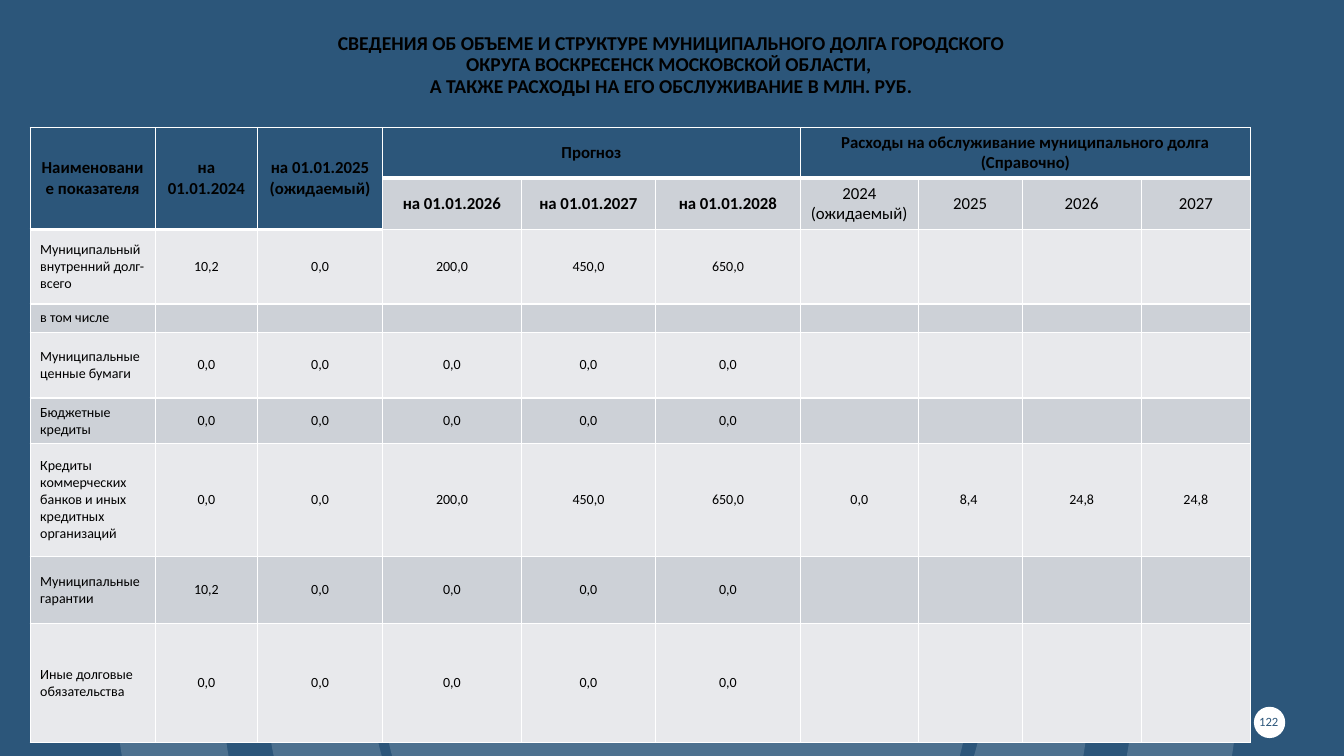
from lxml import etree
from pptx import Presentation
from pptx import util as u
from pptx.dml.color import RGBColor
from pptx.enum import shapes, text
from pptx.oxml.ns import qn

NAVY, WHITE, BLACK = "2C567A", "FFFFFF", "000000"
LIGHT, GREY = "E8E9EC", "CDD1D7"
CENTER, LEFT = text.PP_ALIGN.CENTER, text.PP_ALIGN.LEFT
OVAL, RECTANGLE = shapes.MSO_SHAPE.OVAL, shapes.MSO_SHAPE.RECTANGLE
SLIDE_WIDTH, SLIDE_HEIGHT = 33.87, 19.05

TITLE = ("СВЕДЕНИЯ ОБ ОБЪЕМЕ И СТРУКТУРЕ МУНИЦИПАЛЬНОГО ДОЛГА ГОРОДСКОГО\v"
         "ОКРУГА ВОСКРЕСЕНСК МОСКОВСКОЙ ОБЛАСТИ, \v"
         "А ТАКЖЕ РАСХОДЫ НА ЕГО ОБСЛУЖИВАНИЕ В МЛН. РУБ.")

COLUMN_WIDTHS = [3.15, 2.58, 3.15, 3.5, 3.38, 3.65, 2.97, 2.62, 3.0, 2.75]
ROW_HEIGHTS = [1.28, 1.29, 1.88, 0.71, 1.66, 1.15, 2.85, 1.68, 3.0]
# (row, column, last row, last column, label)
TOP_HEADERS = [
    (0, 0, 1, 0, "Наименование показателя"),
    (0, 1, 1, 1, "на 01.01.2024"),
    (0, 2, 1, 2, "на 01.01.2025\n(ожидаемый)"),
    (0, 3, 0, 5, "Прогноз"),
    (0, 6, 0, 9, "Расходы на обслуживание муниципального долга (Справочно)"),
]
FORECAST_DATES = ["на 01.01.2026", "на 01.01.2027", "на 01.01.2028"]
SERVICE_YEARS = ["2024 (ожидаемый)", "2025", "2026", "2027"]
ZEROS = ["0,0"] * 5
DEBT_ROWS = [
    ["Муниципальный внутренний долг- всего", "10,2", "0,0", "200,0", "450,0", "650,0"],
    ["в том числе"],
    ["Муниципальные ценные бумаги", *ZEROS],
    ["Бюджетные кредиты", *ZEROS],
    ["Кредиты коммерческих банков и иных кредитных организаций",
     "0,0", "0,0", "200,0", "450,0", "650,0", "0,0", "8,4 ", "24,8", "24,8"],
    ["Муниципальные гарантии", "10,2", *ZEROS[1:]],
    ["Иные долговые обязательства", *ZEROS],
]

# Ring outlines in hundredths of an inch: the start, then three points per Bezier curve
OUTER_RING = [
    (640, 1238), (453, 1227), (282, 1131), (180, 930), (78, 725), (97, 524), (220, 334),
    (238, 310), (252, 280), (286, 282), (333, 284), (348, 337), (314, 385),
    (163, 596), (197, 875), (395, 1033), (570, 1172), (821, 1159), (981, 1004),
    (1147, 845), (1173, 592), (1043, 402), (1038, 395), (1034, 387), (1028, 380),
    (1000, 350), (1000, 321), (1034, 293), (1072, 262), (1094, 293), (1111, 319),
    (1221, 467), (1256, 633), (1209, 814), (1145, 1065), (923, 1235), (640, 1238)]
INNER_RING = [
    (674, 1085), (472, 1085), (308, 945), (270, 742), (265, 712), (252, 675), (299, 666),
    (340, 657), (363, 670), (372, 721), (402, 878), (527, 982), (674, 980),
    (821, 980), (945, 873), (975, 714), (983, 668), (1007, 660), (1045, 664),
    (1090, 670), (1081, 705), (1077, 736), (1051, 932), (877, 1085), (674, 1085)]


def color(value):
    return RGBColor.from_string(value)


def paint(shape, fill, opacity=None):
    shape.shadow.inherit = False
    shape.line.fill.background()
    shape.fill.solid()
    shape.fill.fore_color.rgb = color(fill)
    if opacity:
        srgb = shape.fill._xPr.find(".//" + qn("a:srgbClr"))
        etree.SubElement(srgb, qn("a:alpha"), val=str(opacity * 1000))


def write(paragraph, size, ink=BLACK, bold=False, align=CENTER):
    paragraph.alignment = align
    look = {"name": "Calibri", "size": u.Pt(size), "bold": bold}
    for run in paragraph.runs:
        for key, value in look.items():
            setattr(run.font, key, value)
        run.font.color.rgb = color(ink)


def add_plain_shape(slide, kind, left, top, width, height, fill, opacity=None):
    box = [u.Cm(length) for length in (left, top, width, height)]
    paint(slide.shapes.add_shape(kind, *box), fill, opacity)


def add_ring(slide, points):
    builder = slide.shapes.build_freeform(*points[0], scale=u.Cm(2.54) / 100)
    builder.add_line_segments(points[1:], close=True)
    ring = builder.convert_to_shape()
    # Turn each three straight segments into one Bezier curve
    segments = list(ring._element.iter(qn("a:lnTo")))
    for first in range(0, len(segments), 3):
        curve = etree.Element(qn("a:cubicBezTo"))
        segments[first].addprevious(curve)
        for segment in segments[first:first + 3]:
            curve.append(segment[0])
            segment.getparent().remove(segment)
    paint(ring, WHITE, 16)


def add_title(slide):
    title = slide.shapes.title
    place = {"left": 2.31, "top": 0.5, "width": 29.21, "height": 2.08}
    for side, length in place.items():
        setattr(title, side, u.Cm(length))
    frame = title.text_frame
    frame.text = TITLE
    frame.auto_size = text.MSO_AUTO_SIZE.NONE
    frame.vertical_anchor = text.MSO_ANCHOR.BOTTOM
    frame.paragraphs[0].line_spacing = 0.9
    write(frame.paragraphs[0], 14, bold=True)


def add_page_number(slide):
    number = slide.shapes.add_textbox(u.Cm(31.57), u.Cm(17.93), u.Cm(0.81), u.Cm(0.51))
    frame = number.text_frame
    for side in ("left", "top", "right", "bottom"):
        setattr(frame, "margin_" + side, 0)
    frame.word_wrap = True
    frame.vertical_anchor = text.MSO_ANCHOR.MIDDLE
    frame.text = "122"
    write(frame.paragraphs[0], 9, NAVY)


def set_borders(cell, widths):
    for side, width in widths.items():
        line = etree.SubElement(cell._tc.get_or_add_tcPr(), qn("a:ln" + side),
                                w=str(u.Pt(width)))
        fill = etree.SubElement(line, qn("a:solidFill"))
        etree.SubElement(fill, qn("a:srgbClr"), val=WHITE)


def style_cell(cell, fill, borders):
    set_borders(cell, borders)
    cell.fill.solid()
    cell.fill.fore_color.rgb = color(fill)
    cell.vertical_anchor = text.MSO_ANCHOR.MIDDLE


def fill_cell(cell, label, size, bold=False, align=CENTER):
    cell.text = label
    for paragraph in cell.text_frame.paragraphs:
        write(paragraph, size, bold=bold, align=align)
        if not label:
            etree.SubElement(paragraph._p, qn("a:endParaRPr"), sz=str(size * 100))


def add_debt_table(slide):
    table = slide.shapes.add_table(
        len(ROW_HEIGHTS), len(COLUMN_WIDTHS), u.Cm(0.76), u.Cm(3.21),
        u.Cm(sum(COLUMN_WIDTHS)), u.Cm(sum(ROW_HEIGHTS))).table
    table.first_row = table.horz_banding = False
    for column, width in zip(table.columns, COLUMN_WIDTHS):
        column.width = u.Cm(width)
    for row, height in zip(table.rows, ROW_HEIGHTS):
        row.height = u.Cm(height)

    # Fills and borders
    for r in range(len(ROW_HEIGHTS)):
        for c in range(len(COLUMN_WIDTHS)):
            if r == 0 or (r == 1 and c < 3):
                style_cell(table.cell(r, c), NAVY, {"L": 1, "R": 1, "T": 1, "B": 3})
            else:
                style_cell(table.cell(r, c), GREY if r % 2 else LIGHT,
                           {"L": 1, "R": 1, "B": 1})

    # Two header rows
    for r, c, last_r, last_c, label in TOP_HEADERS:
        table.cell(r, c).merge(table.cell(last_r, last_c))
        fill_cell(table.cell(r, c), label, 12, bold=True)
    for c, label in enumerate(FORECAST_DATES + SERVICE_YEARS, 3):
        fill_cell(table.cell(1, c), label, 12, bold=label in FORECAST_DATES)

    # Debt figures
    for r, values in enumerate(DEBT_ROWS, 2):
        for c in range(len(COLUMN_WIDTHS)):
            value = values[c] if c < len(values) else ""
            fill_cell(table.cell(r, c), value, 10, align=CENTER if c else LEFT)


def main():
    deck = Presentation()
    deck.slide_width, deck.slide_height = u.Cm(SLIDE_WIDTH), u.Cm(SLIDE_HEIGHT)
    slide = deck.slides.add_slide(deck.slide_layouts[5])

    # Backdrop, page badge and rings
    add_plain_shape(slide, RECTANGLE, 0, 0, SLIDE_WIDTH, SLIDE_HEIGHT, NAVY)
    add_plain_shape(slide, OVAL, 31.6, 17.81, 0.79, 0.79, WHITE)
    add_plain_shape(slide, OVAL, 9.63, 9.73, 14.81, 14.81, WHITE, 16)
    for ring in (OUTER_RING, INNER_RING):
        add_ring(slide, ring)

    # Content: the title placeholder moves in front of the backdrop
    add_title(slide)
    slide.shapes._spTree.append(slide.shapes.title._element)
    add_page_number(slide)
    add_debt_table(slide)
    deck.save("out.pptx")


if __name__ == "__main__":
    main()
